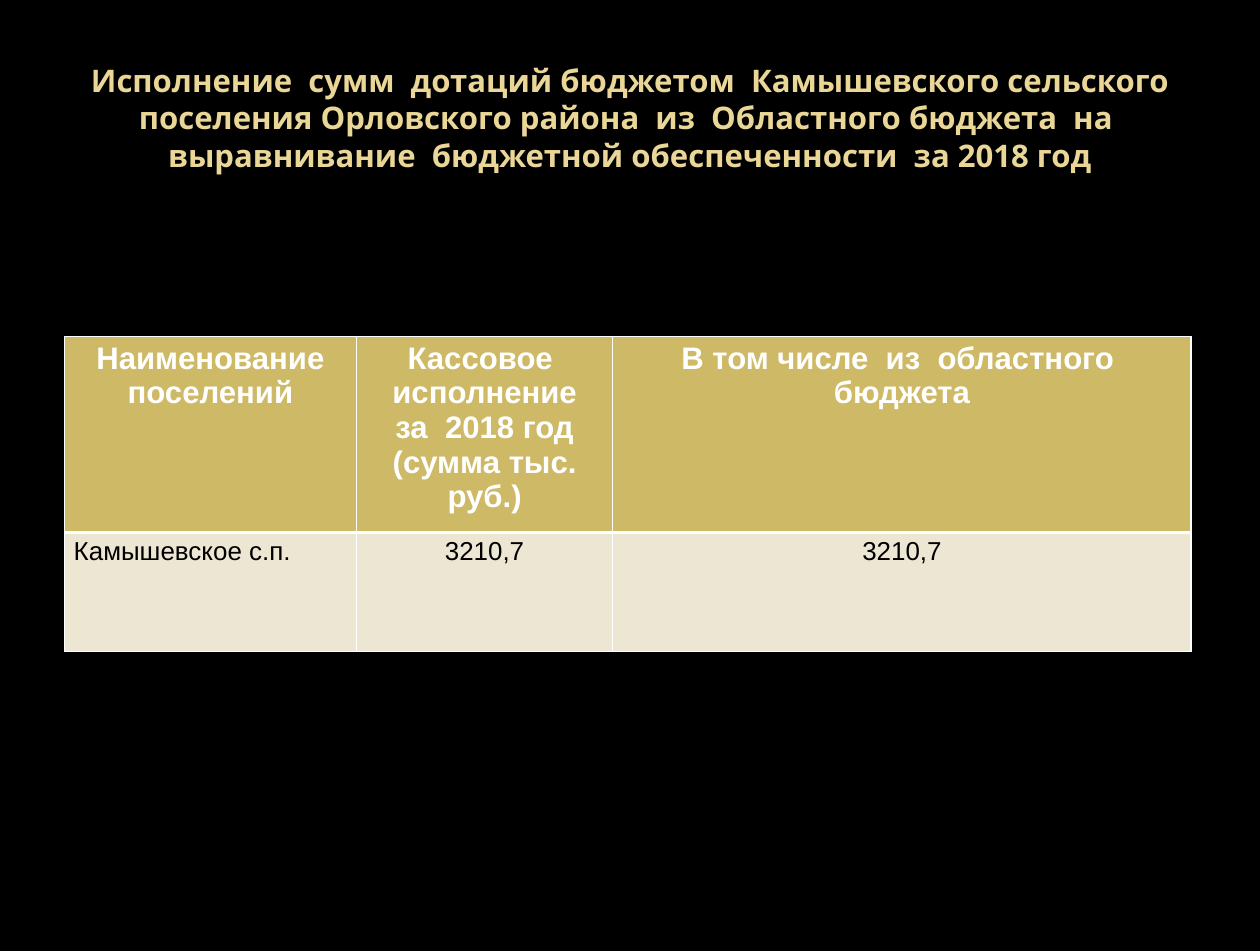
"""Build the slide on subsidies in the settlement's budget for 2018."""
from dataclasses import dataclass

from lxml import etree
from pptx import Presentation
from pptx import util as u
from pptx.dml.color import RGBColor
from pptx.enum import text
from pptx.oxml.ns import qn

SLIDE_WIDTH, SLIDE_HEIGHT = u.Inches(13.51), u.Inches(10.2)
BLANK_LAYOUT = 6
BLACK, WHITE, PALE_GOLD = "000000", "FFFFFF", "EAD696"
HEADING = (
    "Исполнение  сумм  дотаций бюджетом  Камышевского сельского поселения "
    "Орловского района  из  Областного бюджета  на  выравнивание  "
    "бюджетной обеспеченности  за 2018 год"
)
COLUMN_PERCENTS = (23.17, 20.36, 45.89)
CENTER, LEFT = text.PP_ALIGN.CENTER, text.PP_ALIGN.LEFT


@dataclass(frozen=True)
class Lettering:
    """Typeface, size, weight and colour of a paragraph."""
    face: str
    size: int
    bold: bool
    color: str


@dataclass(frozen=True)
class BudgetRow:
    """One table row: its height, look, texts and border widths."""
    height: float
    fill: str
    lettering: Lettering
    alignments: tuple
    texts: tuple
    top_line: int
    bottom_line: int


HEADING_LETTERING = Lettering("Open Sans", 24, True, PALE_GOLD)
BUDGET_ROWS = (
    BudgetRow(
        20.59, "CEB966", Lettering("Arial", 24, True, WHITE),
        (CENTER, CENTER, CENTER),
        ("Наименование\nпоселений",
         "Кассовое \nисполнение\nза  2018 год\n(сумма тыс. руб.)",
         "В том числе  из  областного  бюджета"), 1, 3),
    BudgetRow(
        12.55, "EDE6D3", Lettering("Arial", 20, False, BLACK),
        (LEFT, CENTER, CENTER),
        ("Камышевское с.п.", "3210,7", "3210,7"), 3, 1),
)


def across(percent: float) -> int:
    """Turn a percentage of the slide's width into a length."""
    return round(SLIDE_WIDTH * percent / 100)


def down(percent: float) -> int:
    """Turn a percentage of the slide's height into a length."""
    return round(SLIDE_HEIGHT * percent / 100)


def paint(fill, color: str) -> None:
    """Give a fill one solid colour."""
    fill.solid()
    fill.fore_color.rgb = RGBColor.from_string(color)


def write(frame, words: str, lettering: Lettering, alignment) -> None:
    """Fill a text frame, one paragraph to a line."""
    frame.text = words
    frame.word_wrap = True
    for paragraph in frame.paragraphs:
        paragraph.alignment = alignment
        paragraph.font.name = lettering.face
        paragraph.font.size = u.Pt(lettering.size)
        paragraph.font.bold = lettering.bold
        paint(paragraph.font.fill, lettering.color)


def outline(cell, top: int, bottom: int) -> None:
    """Draw white borders around a table cell."""
    properties = cell._tc.get_or_add_tcPr()
    widths = {"a:lnL": 1, "a:lnR": 1, "a:lnT": top, "a:lnB": bottom}
    for position, (side, width) in enumerate(widths.items()):
        line = etree.Element(qn(side), w=str(u.Pt(width)))
        solid = etree.SubElement(line, qn("a:solidFill"))
        etree.SubElement(solid, qn("a:srgbClr"), val=WHITE)
        properties.insert(position, line)


def add_heading(slide) -> None:
    """Add the centred heading."""
    heading = slide.shapes.add_textbox(
        across(5.03), down(4.02), across(89.93), down(16.67))
    frame = heading.text_frame
    frame.vertical_anchor = text.MSO_ANCHOR.MIDDLE
    frame.margin_left = frame.margin_right = u.Inches(0.14)
    frame.margin_top = frame.margin_bottom = u.Inches(0.07)
    write(frame, HEADING, HEADING_LETTERING, CENTER)


def add_budget_table(slide) -> None:
    """Add the table of subsidies."""
    table = slide.shapes.add_table(
        len(BUDGET_ROWS), len(COLUMN_PERCENTS), across(5.11), down(35.39),
        across(sum(COLUMN_PERCENTS)),
        down(sum(row.height for row in BUDGET_ROWS))).table
    for column, percent in zip(table.columns, COLUMN_PERCENTS):
        column.width = across(percent)
    for table_row, row in zip(table.rows, BUDGET_ROWS):
        table_row.height = down(row.height)
        for cell, words, alignment in zip(
                table_row.cells, row.texts, row.alignments):
            write(cell.text_frame, words, row.lettering, alignment)
            paint(cell.fill, row.fill)
            outline(cell, row.top_line, row.bottom_line)


def main() -> None:
    """Assemble and save the presentation."""
    presentation = Presentation()
    presentation.slide_width = SLIDE_WIDTH
    presentation.slide_height = SLIDE_HEIGHT
    slide = presentation.slides.add_slide(
        presentation.slide_layouts[BLANK_LAYOUT])
    paint(slide.background.fill, BLACK)
    add_heading(slide)
    add_budget_table(slide)
    presentation.save("out.pptx")


if __name__ == "__main__":
    main()
